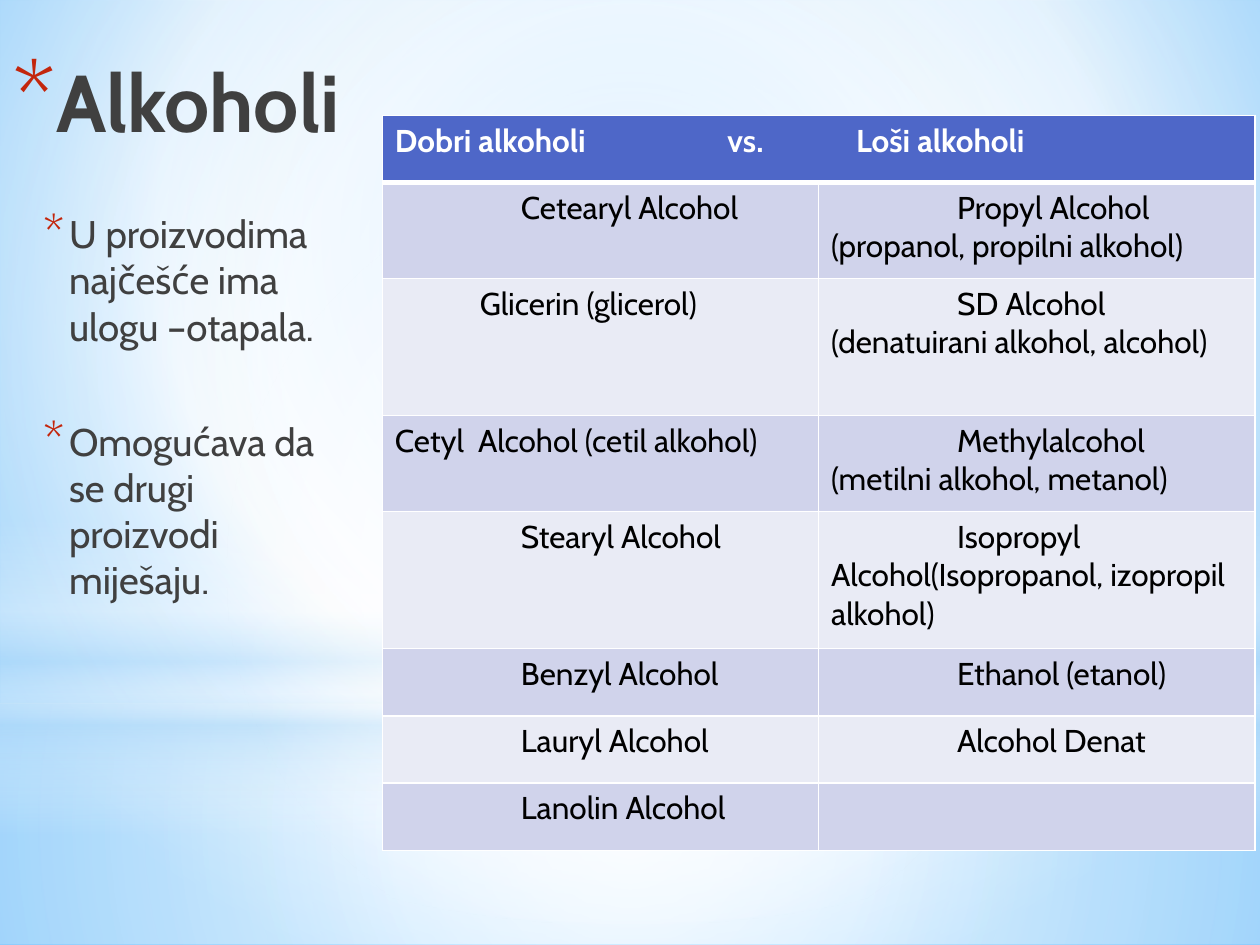
from typing import Any, NamedTuple, Optional

import pptx
import pptx.dml.color
import pptx.enum.shapes
import pptx.enum.text
import pptx.oxml.ns
import pptx.util
from lxml import etree

Pt = pptx.util.Pt
RGB = pptx.dml.color.RGBColor
SHAPE = pptx.enum.shapes.MSO_SHAPE
qn = pptx.oxml.ns.qn

FONT = "Cabin"
WHITE, BLACK, DARK = RGB(255, 255, 255), RGB(0, 0, 0), RGB(0x40, 0x40, 0x40)
RED = RGB(0xC3, 0x26, 0x0C)
SKY, BLUE, PALE = RGB(0x9E, 0xD5, 0xFF), RGB(0x5B, 0xB9, 0xFF), RGB(0xB4, 0xDC, 0xFA)
HEADER = RGB(0x4E, 0x67, 0xC8)
BANDS = (RGB(0xD0, 0xD3, 0xEB), RGB(0xE9, 0xEB, 0xF5))


class Stop(NamedTuple):
    pos: int
    color: RGB
    opacity: int = 100


class Glow(NamedTuple):
    shape: SHAPE
    top: float
    height: float
    stops: tuple[Stop, ...]
    angle: Optional[int] = None


class Entry(NamedTuple):
    text: str
    indent: float = 72


class Row(NamedTuple):
    height: float
    good: Entry
    bad: Entry


CENTER = (50, 50, 50, 50)
BACKGROUND = (Stop(0, SKY), Stop(60, WHITE), Stop(100, BLUE))
GLOWS = (
    Glow(SHAPE.RECTANGLE, 402, 138,
         (Stop(0, WHITE, 91), Stop(37, WHITE, 76), Stop(100, PALE, 79))),
    Glow(SHAPE.RECTANGLE, 0, 402,
         (Stop(0, WHITE, 89), Stop(48, WHITE, 62), Stop(100, PALE, 79))),
    Glow(SHAPE.RECTANGLE, 297, 180,
         (Stop(0, WHITE, 0), Stop(29, WHITE, 30), Stop(45, PALE, 40),
          Stop(55, WHITE, 26), Stop(65, PALE, 60), Stop(100, WHITE, 0)), 90),
    Glow(SHAPE.OVAL, 126, 402, (Stop(0, WHITE), Stop(56, WHITE, 0))),
)
LOW, MID, TALL = 38.4, 54.8, 78.4
ROWS = (
    Row(MID, Entry("Cetearyl Alcohol"), Entry("Propyl Alcohol (propanol, propilni alkohol)")),
    Row(TALL, Entry("Glicerin (glicerol)", 48.5),
        Entry("SD Alcohol (denatuirani alkohol, alcohol)")),
    Row(MID, Entry("Cetyl  Alcohol (cetil alkohol)", 0),
        Entry("Methylalcohol (metilni alkohol, metanol)")),
    Row(TALL, Entry("Stearyl Alcohol"),
        Entry("Isopropyl Alcohol(Isopropanol, izopropil alkohol)")),
    Row(LOW, Entry("Benzyl Alcohol"), Entry("Ethanol (etanol)")),
    Row(LOW, Entry("Lauryl Alcohol"), Entry("Alcohol Denat")),
    Row(LOW, Entry("Lanolin Alcohol"), Entry("")),
)


def add(parent: Any, tag: str, **attrs: Any) -> Any:
    return etree.SubElement(parent, qn(tag), {k: str(v) for k, v in attrs.items()})


def set_gradient(fill: Any, owner: Any, stops: tuple[Stop, ...],
                 focus: tuple[int, ...] = CENTER, angle: Optional[int] = None) -> None:
    """Fill the owner element with a circular gradient, or a linear one if angle is given."""
    fill.gradient()
    grad = next(owner.iter(qn("a:gradFill")))
    for child in list(grad):
        grad.remove(child)
    stop_list = add(grad, "a:gsLst")
    for stop in stops:
        gs = add(stop_list, "a:gs", pos=stop.pos * 1000)
        clr = add(gs, "a:srgbClr", val=stop.color)
        if stop.opacity < 100:
            add(clr, "a:alpha", val=stop.opacity * 1000)
    if angle is not None:
        add(grad, "a:lin", ang=angle * 60000, scaled=0)
    else:
        circle = add(grad, "a:path", path="circle")
        add(circle, "a:fillToRect", **{k: v * 1000 for k, v in zip("ltrb", focus)})


def draw_glow(s: Any, glow: Glow) -> None:
    sp = s.shapes.add_shape(glow.shape, 0, Pt(glow.top), Pt(720), Pt(glow.height))
    sp.shadow.inherit = False
    sp.line.fill.background()
    set_gradient(sp.fill, sp.element.spPr, glow.stops, angle=glow.angle)


def style(p: Any, size: float, color: RGB, bold: bool = False) -> None:
    for r in p.runs:
        r.font.name, r.font.size, r.font.bold = FONT, Pt(size), bold
        r.font.color.rgb = color


def set_indent(p: Any, left: float, first: float) -> Any:
    pPr = p._p.get_or_add_pPr()
    pPr.set("marL", str(Pt(left)))
    pPr.set("indent", str(Pt(first)))
    return pPr


def add_bullet(p: Any, left: float, hanging: float, percent: int) -> None:
    pPr = set_indent(p, left, -hanging)
    add(add(pPr, "a:buClr"), "a:srgbClr", val=RED)
    add(pPr, "a:buSzPct", val=percent * 1000)
    add(pPr, "a:buFont", typeface=FONT)
    add(pPr, "a:buChar", char="*")


def add_text(s: Any, left: float, top: float, width: float, height: float, text: str) -> Any:
    tf = s.shapes.add_textbox(Pt(left), Pt(top), Pt(width), Pt(height)).text_frame
    tf.word_wrap = True
    tf.vertical_anchor = pptx.enum.text.MSO_ANCHOR.TOP
    tf.text = text
    return tf


def fill_cell(cell: Any, text: str, color: RGB, top: float = 1, bottom: float = 1) -> Any:
    """Set text, white borders and fill; return the paragraph."""
    tcPr = cell._tc.get_or_add_tcPr()
    for side, width in zip("LRTB", (1, 1, top, bottom)):
        ln = add(tcPr, f"a:ln{side}", w=Pt(width))
        add(add(ln, "a:solidFill"), "a:srgbClr", val=WHITE)
    cell.fill.solid()
    cell.fill.fore_color.rgb = color
    p = cell.text_frame.paragraphs[0]
    p.text = text
    p.font.size = Pt(18)
    return p


def draw_table(s: Any) -> None:
    heights = [LOW] + [row.height for row in ROWS]
    table = s.shapes.add_table(len(heights), 2, Pt(218.5), Pt(66), Pt(498.6),
                               Pt(sum(heights))).table
    for column in table.columns:
        column.width = Pt(249.3)
    for row, height in zip(table.rows, heights):
        row.height = Pt(height)

    table.cell(0, 0).merge(table.cell(0, 1))
    fill_cell(table.cell(0, 1), "", HEADER, bottom=3)
    p = fill_cell(table.cell(0, 0), "Dobri alkoholi\tvs.\tLoši alkoholi", HEADER, bottom=3)
    style(p, 18, WHITE, bold=True)
    tabs = etree.Element(qn("a:tabLst"))
    for pos in (190, 263.5):
        add(tabs, "a:tab", pos=Pt(pos), algn="l")
    p._p.get_or_add_pPr().insert(0, tabs)

    for i, row in enumerate(ROWS):
        for j, entry in enumerate((row.good, row.bad)):
            p = fill_cell(table.cell(i + 1, j), entry.text, BANDS[i % 2], top=1 if i else 3)
            set_indent(p, 0, entry.indent)
            style(p, 18, BLACK)


def main() -> None:
    prs = pptx.Presentation()
    prs.slide_width, prs.slide_height = Pt(720), Pt(540)
    s = prs.slides.add_slide(prs.slide_layouts[6])
    set_gradient(s.background.fill, s.element, BACKGROUND, (20, 10, 20, 60))
    for glow in GLOWS:
        draw_glow(s, glow)

    p = add_text(s, 0, 26, 512.6, 90, "Alkoholi").paragraphs[0]
    add_bullet(p, 25.2, 25.2, 128)
    style(p, 46, DARK, bold=True)

    body = add_text(s, 14.4, 116.6, 193, 374.4,
                    "U proizvodima najčešće ima ulogu –otapala.\n"
                    "Omogućava da se drugi proizvodi miješaju.")
    for p, before in zip(body.paragraphs, (4.4, 36.5)):
        add_bullet(p, 18, 14.4, 130)
        p.space_before, p.space_after = Pt(before), Pt(3)
        style(p, 22, DARK)

    draw_table(s)
    prs.save("out.pptx")


if __name__ == "__main__":
    main()
